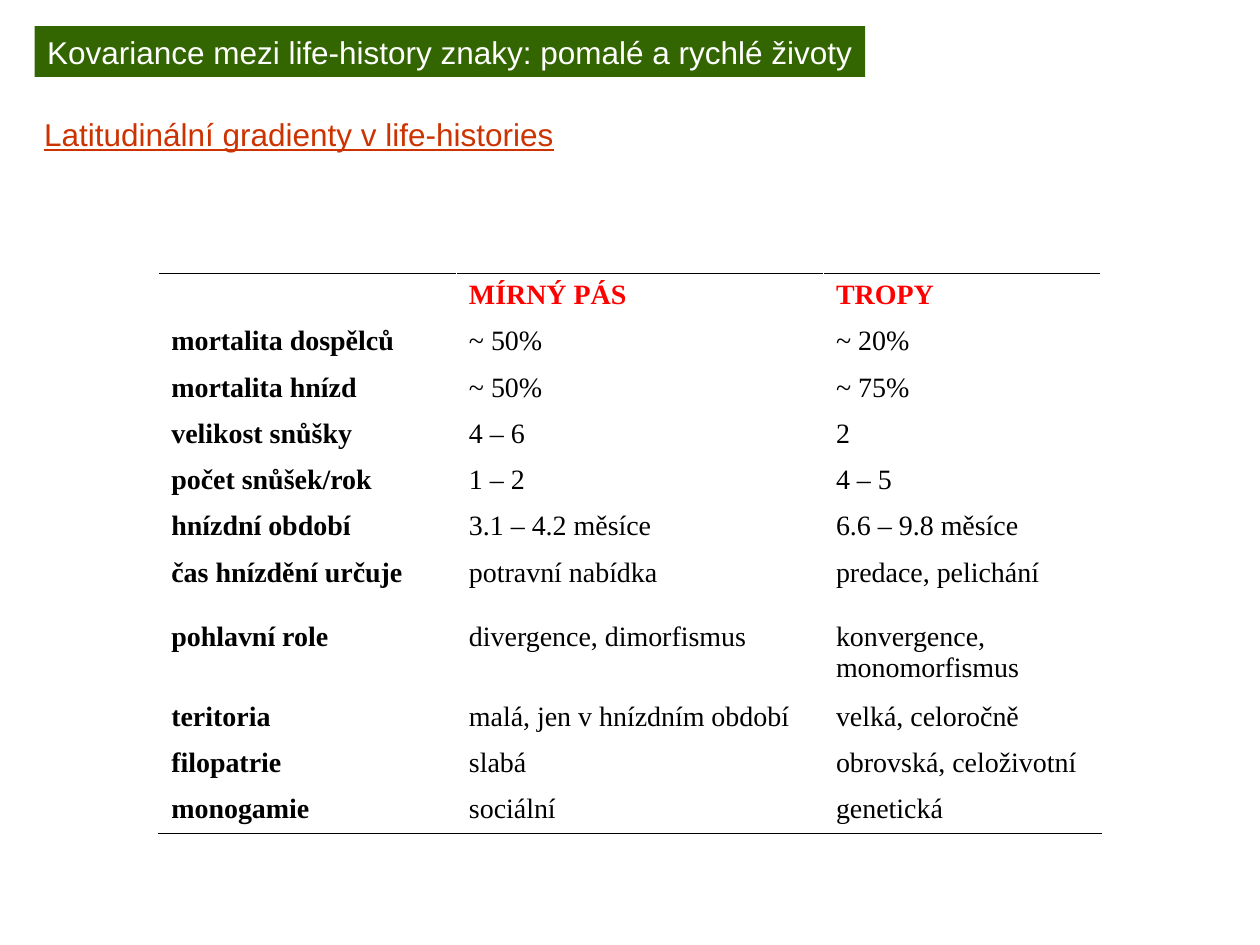
from lxml.etree import SubElement
from pptx import Presentation
from pptx.dml.color import RGBColor
from pptx.enum.shapes import MSO_SHAPE
from pptx.enum.text import MSO_AUTO_SIZE, PP_ALIGN
from pptx.oxml import parse_xml
from pptx.oxml.ns import nsdecls, qn
from pptx.util import Cm, Pt


def rgb(value):
    return RGBColor.from_string(value)


def style(p, font, size, color, bold=False, underline=False):
    for r in p.runs:
        r.font.name = font
        r.font.size = Pt(size)
        r.font.color.rgb = rgb(color)
        r.font.bold = bold
        r.font.underline = underline


prs = Presentation()
prs.slide_width, prs.slide_height = Cm(25.4), Cm(19.05)
s = prs.slides.add_slide(prs.slide_layouts[6])

title = s.shapes.add_shape(MSO_SHAPE.RECTANGLE, Cm(0.7), Cm(0.53), Cm(16.74), Cm(1.02))
title.shadow.inherit = False
title.fill.solid()
title.fill.fore_color.rgb = rgb("336600")
title.line.fill.background()
subtitle = s.shapes.add_textbox(Cm(0.64), Cm(2.19), Cm(10.87), Cm(1.02))

headings = [
    (title, "Kovariance mezi life-history znaky: pomalé a rychlé životy", "FFFFFF", False),
    (subtitle, "Latitudinální gradienty v life-histories", "CC3300", True),
]
for sp, text, color, underline in headings:
    tf = sp.text_frame
    tf.text = text
    tf.word_wrap = False
    tf.auto_size = MSO_AUTO_SIZE.SHAPE_TO_FIT_TEXT
    p = tf.paragraphs[0]
    p.alignment = PP_ALIGN.LEFT
    style(p, "Arial", 18, color, underline=underline)

rows = [
    ("", "MÍRNÝ PÁS", "TROPY"),
    ("mortalita dospělců", "~ 50%", "~ 20%"),
    ("mortalita hnízd", "~ 50%", "~ 75%"),
    ("velikost snůšky", "4 – 6", "2"),
    ("počet snůšek/rok", "1 – 2", "4 – 5"),
    ("hnízdní období", "3.1 – 4.2 měsíce", "6.6 – 9.8 měsíce"),
    ("čas hnízdění určuje", "potravní nabídka", "predace, pelichání"),
    ("pohlavní role", "divergence, dimorfismus", "konvergence, monomorfismus"),
    ("teritoria", "malá, jen v hnízdním období", "velká, celoročně"),
    ("filopatrie", "slabá", "obrovská, celoživotní"),
    ("monogamie", "sociální", "genetická"),
]
widths = [6.0, 7.4, 5.59]
heights = [0.93] * 6 + [1.3, 1.6] + [0.93] * 3
borders = {0: "lnT", len(rows) - 1: "lnB"}

table = s.shapes.add_table(
    len(rows), len(widths), Cm(3.2), Cm(5.51), Cm(sum(widths)), Cm(sum(heights))
).table
table.first_row = False
table.horz_banding = False
for column, width in zip(table.columns, widths):
    column.width = Cm(width)

for i, (values, height) in enumerate(zip(rows, heights)):
    table.rows[i].height = Cm(height)
    for j, value in enumerate(values):
        cell = table.cell(i, j)
        cell.fill.background()
        cell.text_frame.text = value
        p = cell.text_frame.paragraphs[0]
        p.alignment = PP_ALIGN.JUSTIFY if i == 0 else PP_ALIGN.LEFT
        style(p, "Times New Roman", 16, "FF0000" if i == 0 else "000000", bold=i == 0 or j == 0)
        if not value:
            SubElement(p._p, qn("a:endParaRPr"), sz="1600")
        if i in borders:
            cell._tc.get_or_add_tcPr().insert(0, parse_xml(
                f'<a:{borders[i]} {nsdecls("a")} w="12700"><a:solidFill>'
                f'<a:srgbClr val="000000"/></a:solidFill></a:{borders[i]}>'
            ))

prs.save("out.pptx")
